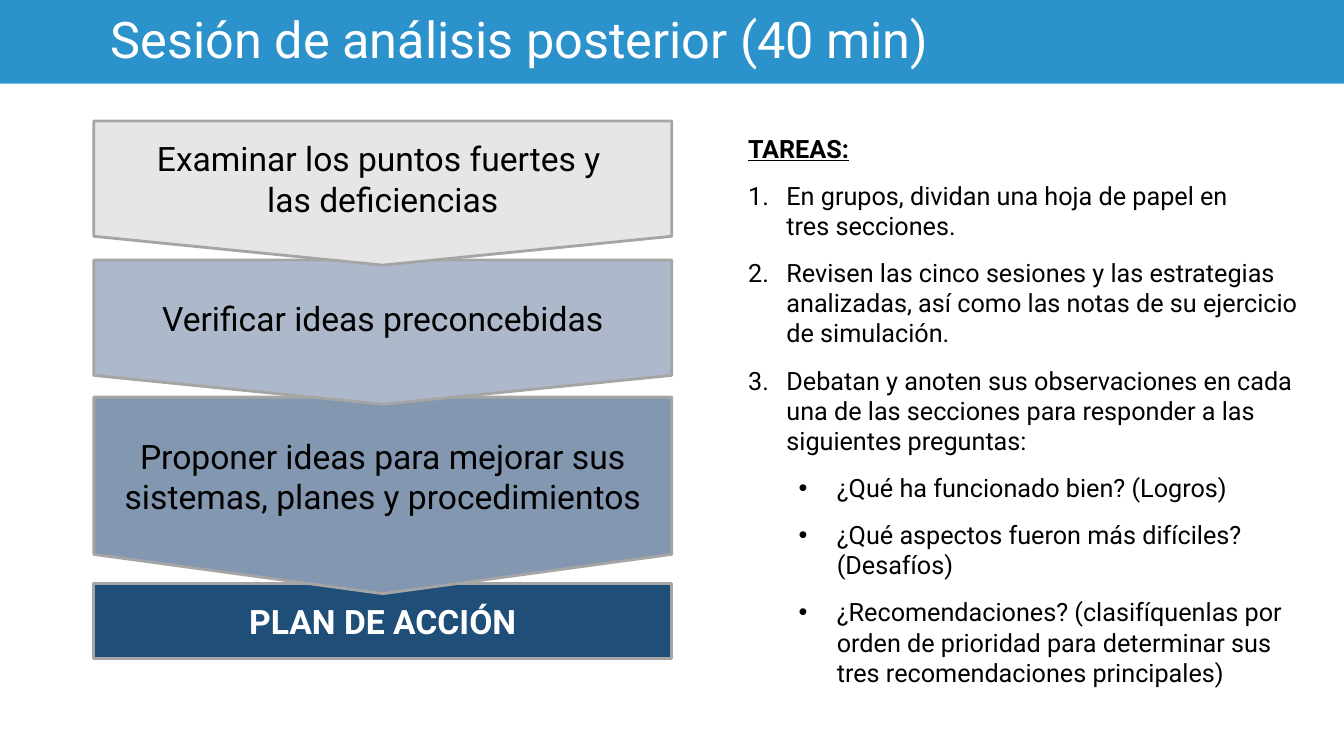
from lxml import etree
from pptx import Presentation
from pptx.dml.color import RGBColor
from pptx.enum.shapes import MSO_SHAPE
from pptx.enum.text import MSO_ANCHOR, MSO_AUTO_SIZE, PP_ALIGN
from pptx.oxml.ns import qn
from pptx.util import Inches, Pt

RECTANGLE = MSO_SHAPE.RECTANGLE
POINTED_BOX = MSO_SHAPE.FLOWCHART_OFFPAGE_CONNECTOR
MIDDLE, TOP = MSO_ANCHOR.MIDDLE, MSO_ANCHOR.TOP
LEFT, CENTER = PP_ALIGN.LEFT, PP_ALIGN.CENTER
NO_AUTOFIT = MSO_AUTO_SIZE.NONE

BLACK = RGBColor(0x00, 0x00, 0x00)
WHITE = RGBColor(0xFF, 0xFF, 0xFF)
SKY = RGBColor(0x2B, 0x92, 0xCB)
NAVY = RGBColor(0x1F, 0x4E, 0x79)
STEEL = RGBColor(0x84, 0x97, 0xB0)
MIST = RGBColor(0xAD, 0xB9, 0xCA)
PALE = RGBColor(0xE7, 0xE6, 0xE6)
GRAY = RGBColor(0xA5, 0xA5, 0xA5)

TITLE = "Sesión de análisis posterior (40 min)"
STEPS = [
    ("PLAN DE ACCIÓN", RECTANGLE, 77.2, 9.87, NAVY, WHITE, True),
    ("Proponer ideas para mejorar sus sistemas, planes y procedimientos",
     POINTED_BOX, 52.53, 26, STEEL, BLACK, False),
    ("Verificar ideas preconcebidas", POINTED_BOX, 34.4, 19.07, MIST, BLACK, False),
    ("Examinar los puntos fuertes y \vlas deficiencias",
     POINTED_BOX, 16, 19.07, PALE, BLACK, False),
]
TASKS = [
    ("heading", "TAREAS:"),
    ("number", "En grupos, dividan una hoja de papel en \vtres secciones."),
    ("number", "Revisen las cinco sesiones y las estrategias analizadas, "
               "así como las notas de su ejercicio de simulación."),
    ("number", "Debatan y anoten sus observaciones en cada una de las secciones "
               "para responder a las siguientes preguntas:"),
    ("bullet", "¿Qué ha funcionado bien? (Logros)"),
    ("bullet", "¿Qué aspectos fueron más difíciles? (Desafíos)"),
    ("bullet", "¿Recomendaciones? (clasifíquenlas por orden de prioridad "
               "para determinar sus tres recomendaciones principales)"),
]
MARKERS = {
    "heading": (0, 0, 0, [("a:buNone", {})]),
    "number": (0, 0.38, -0.38, [("a:buFont", {"typeface": "+mj-lt"}),
                                ("a:buAutoNum", {"type": "arabicPeriod"})]),
    "bullet": (1, 0.88, -0.38, [("a:buFont", {"typeface": "Arial"}),
                                ("a:buChar", {"char": "•"})]),
}

presentation = Presentation()
presentation.slide_width = Inches(13.33)
presentation.slide_height = Inches(7.5)
slide = presentation.slides.add_slide(presentation.slide_layouts[1])


def box(left, top, width, height):
    across = presentation.slide_width / 100
    down = presentation.slide_height / 100
    return [round(n) for n in (left * across, top * down, width * across, height * down)]


def apply(target, values):
    for name, value in values.items():
        setattr(target, name, value)


def write(paragraph, text, size, color, **extra):
    paragraph.text = text
    for run in paragraph.runs:
        apply(run.font, {"name": "Roboto", "size": Pt(size), **extra})
        run.font.color.rgb = color


def place(shape, bounds):
    apply(shape, dict(zip(("left", "top", "width", "height"), bounds)))


def mark(paragraph, kind):
    level, margin, indent, markers = MARKERS[kind]
    paragraph.level = level
    properties = paragraph._p.get_or_add_pPr()
    properties.set("marL", str(Inches(margin)))
    properties.set("indent", str(Inches(indent)))
    for tag, attributes in markers:
        etree.SubElement(properties, qn(tag), attributes)


title = slide.shapes.title
place(title, box(0, 0, 100, 11.07))
title.fill.solid()
title.fill.fore_color.rgb = SKY
apply(title.text_frame, {"vertical_anchor": MIDDLE, "auto_size": NO_AUTOFIT,
                         "word_wrap": True, "margin_left": Inches(1.1)})
heading = title.text_frame.paragraphs[0]
write(heading, TITLE, 36, WHITE)
apply(heading, {"alignment": LEFT, "line_spacing": 0.9})

for text, outline, top, height, fill, color, bold in STEPS:
    step = slide.shapes.add_shape(outline, *box(6.98, top, 43, height))
    step.shadow.inherit = False
    step.fill.solid()
    step.fill.fore_color.rgb = fill
    step.line.color.rgb = GRAY
    step.line.width = Pt(2)
    apply(step.text_frame, {"vertical_anchor": MIDDLE, "word_wrap": True})
    paragraph = step.text_frame.paragraphs[0]
    paragraph.alignment = CENTER
    write(paragraph, text, 24, color, bold=bold)

tasks = slide.placeholders[1]
place(tasks, box(54.91, 16.93, 43, 77.07))
frame = tasks.text_frame
apply(frame, {"vertical_anchor": TOP, "auto_size": NO_AUTOFIT, "word_wrap": True})
for index, (kind, text) in enumerate(TASKS):
    paragraph = frame.add_paragraph() if index else frame.paragraphs[0]
    is_heading = kind == "heading"
    write(paragraph, text, 18, BLACK, bold=is_heading, underline=is_heading)
    apply(paragraph, {"alignment": LEFT, "space_before": Pt(0), "space_after": Pt(12)})
    mark(paragraph, kind)

presentation.save("out.pptx")
